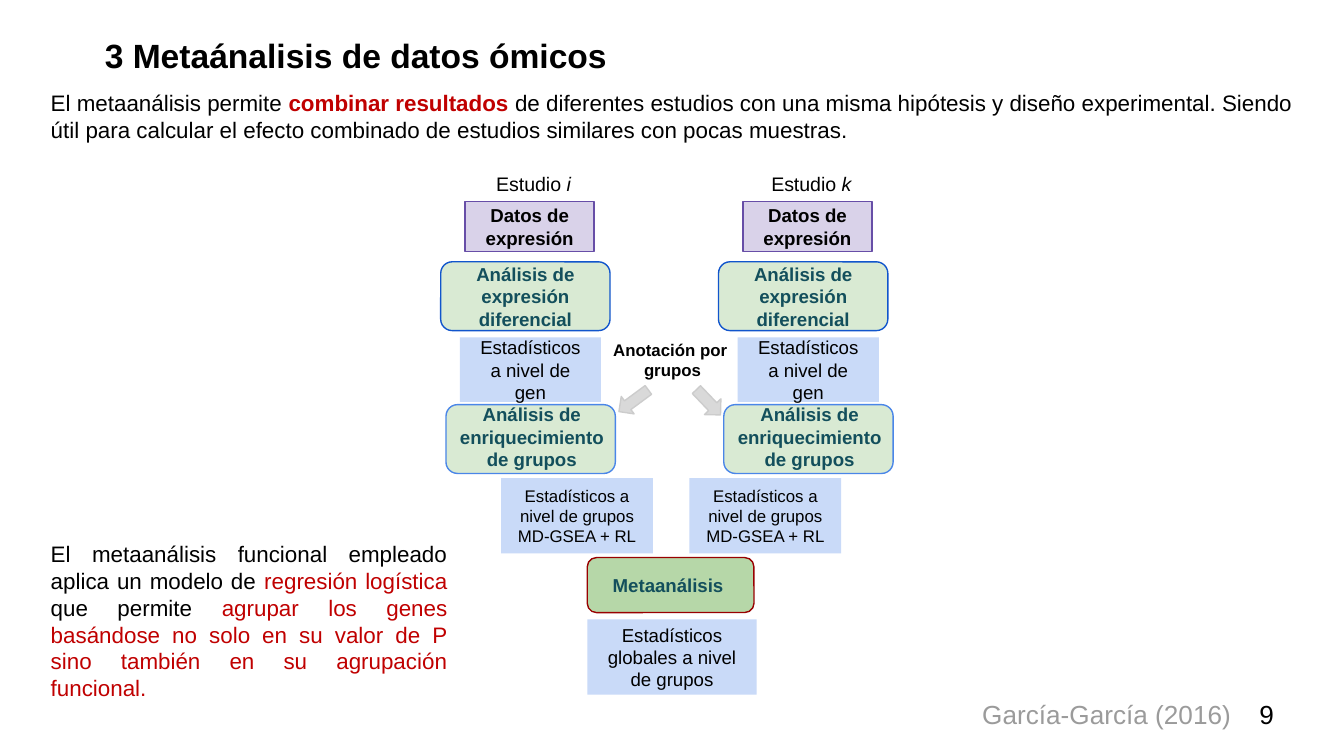
from dataclasses import dataclass
from typing import NamedTuple, Optional

from pptx import Presentation
from pptx.dml.color import RGBColor
from pptx.enum.shapes import MSO_SHAPE
from pptx.enum.text import MSO_ANCHOR, PP_ALIGN
from pptx.util import Cm, Pt

RECTANGLE = MSO_SHAPE.RECTANGLE
ROUNDED = MSO_SHAPE.ROUNDED_RECTANGLE
ARROW = MSO_SHAPE.RIGHT_ARROW
TOP, MIDDLE = MSO_ANCHOR.TOP, MSO_ANCHOR.MIDDLE
LEFT, CENTER = PP_ALIGN.LEFT, PP_ALIGN.CENTER
RIGHT, JUSTIFY = PP_ALIGN.RIGHT, PP_ALIGN.JUSTIFY


@dataclass(frozen=True)
class Theme:
    font: str = "Arial"
    ink: str = "000000"
    accent: str = "C00000"
    teal: str = "134F5C"
    citation: str = "9B9B9B"
    lilac: str = "D9D2E9"
    purple: str = "674EA7"
    pale_green: str = "D9EAD3"
    green: str = "B6D7A8"
    pale_blue: str = "C9DAF8"
    dark_blue: str = "1155CC"
    blue: str = "4A86E8"
    dark_red: str = "980000"
    arrow_fill: str = "D9D9D9"
    arrow_line: str = "CCCCCC"
    title: float = 18
    large: float = 14
    body: float = 12
    label: float = 10.5
    step: float = 10
    small: float = 9
    outline: float = 0.75


THEME = Theme()


class Area(NamedTuple):
    left: float
    top: float
    width: float
    height: float

    def shifted(self, distance: float) -> "Area":
        return self._replace(left=self.left + distance)

    def lengths(self) -> list:
        return [Cm(value) for value in self]


class Span(NamedTuple):
    text: str
    size: float
    color: str = THEME.ink
    bold: bool = False
    italic: bool = False


Paragraphs = list[list[Span]]


@dataclass(frozen=True)
class Step:
    area: Area
    paragraphs: Paragraphs
    fill: str
    line: Optional[str] = None
    preset: MSO_SHAPE = RECTANGLE


def write(box, paragraphs: Paragraphs, align=CENTER, anchor=TOP,
          inset: float = 0.25, after: float = 0, wrap: bool = True) -> None:
    frame = box.text_frame
    frame_format = {
        "word_wrap": wrap, "vertical_anchor": anchor,
        "margin_left": Cm(0.25), "margin_right": Cm(0.25),
        "margin_top": Cm(inset), "margin_bottom": Cm(inset),
    }
    for name, value in frame_format.items():
        setattr(frame, name, value)
    for index, spans in enumerate(paragraphs):
        para = frame.add_paragraph() if index else frame.paragraphs[0]
        para.alignment = align
        para.space_after = Pt(after)
        for span in spans:
            run = para.add_run()
            run.text = span.text
            run_format = {"name": THEME.font, "size": Pt(span.size),
                          "bold": span.bold, "italic": span.italic}
            for name, value in run_format.items():
                setattr(run.font, name, value)
            run.font.color.rgb = RGBColor.from_string(span.color)


def add_text(shapes, area: Area, paragraphs: Paragraphs, **text_format) -> None:
    write(shapes.add_textbox(*area.lengths()), paragraphs, **text_format)


def add_figure(shapes, preset: MSO_SHAPE, area: Area, fill: str, line: Optional[str]):
    figure = shapes.add_shape(preset, *area.lengths())
    figure.shadow.inherit = False
    figure.fill.solid()
    figure.fill.fore_color.rgb = RGBColor.from_string(fill)
    if line:
        figure.line.color.rgb = RGBColor.from_string(line)
        figure.line.width = Pt(THEME.outline)
    else:
        figure.line.fill.background()
    return figure


def add_step(shapes, step: Step, shift: float = 0) -> None:
    figure = add_figure(shapes, step.preset, step.area.shifted(shift), step.fill, step.line)
    write(figure, step.paragraphs, anchor=MIDDLE)


def add_study(shapes, letter: str, shift: float) -> None:
    for step in STUDY_STEPS:
        add_step(shapes, step, shift)
    add_text(shapes, Area(8.69, 2.95, 2.79, 1.04).shifted(shift),
             [[Span("Estudio ", THEME.label), Span(letter, THEME.label, italic=True)]],
             anchor=MIDDLE)
    enrichment = shapes.add_group_shape().shapes
    add_figure(enrichment, ROUNDED, Area(8.43, 7.65, 3.2, 1.3).shifted(shift),
               THEME.pale_green, THEME.blue)
    add_text(enrichment, Area(8.31, 7.37, 3.48, 1.57).shifted(shift),
             [[Span("Análisis de enriquecimiento de grupos", THEME.step, THEME.teal, True)]])


STUDY_STEPS = [
    Step(Area(8.33, 4.95, 3.2, 1.3),
         [[Span("Análisis de expresión diferencial", THEME.step, THEME.teal, True)]],
         THEME.pale_green, THEME.dark_blue, ROUNDED),
    Step(Area(8.69, 6.38, 2.67, 1.22),
         [[Span("Estadísticos a nivel de gen", THEME.step)]], THEME.pale_blue),
    Step(Area(8.79, 3.81, 2.44, 0.94),
         [[Span("Datos de expresión", THEME.step, bold=True)]],
         THEME.lilac, THEME.purple),
]
GROUP_STATISTICS = Step(
    Area(9.47, 9.04, 2.87, 1.42),
    [[Span("Estadísticos a nivel de grupos", THEME.small)],
     [Span("MD-GSEA + RL", THEME.small)]],
    THEME.pale_blue)
FINAL_STEPS = [
    Step(Area(11.1, 10.54, 3.15, 1.04),
         [[Span("Metaanálisis ", THEME.step, THEME.teal, True)]],
         THEME.green, THEME.dark_red, ROUNDED),
    Step(Area(11.1, 11.71, 3.2, 1.42),
         [[Span("Estadísticos globales a nivel de grupos", THEME.step)]],
         THEME.pale_blue),
]
ARROWS = [(Area(11.63, 7.37, 0.69, 0.41), 143.6), (Area(13.06, 7.39, 0.66, 0.43), 46.3)]
INTRODUCTION = [[
    Span("El metaanálisis permite ", THEME.body),
    Span("combinar resultados ", THEME.body, THEME.accent, True),
    Span("de diferentes estudios con una misma hipótesis y diseño experimental. "
         "Siendo útil para calcular el efecto combinado de estudios similares "
         "con pocas muestras.", THEME.body),
]]
MODEL = [[
    Span("El metaanálisis funcional empleado aplica un modelo de ", THEME.body),
    Span("regresión logística ", THEME.body, THEME.accent),
    Span("que permite ", THEME.body),
    Span("agrupar los genes basándose no solo en su valor de P sino también "
         "en su agrupación funcional.", THEME.body, THEME.accent),
]]


def main() -> None:
    deck = Presentation()
    deck.slide_width, deck.slide_height = Cm(25.4), Cm(14.29)
    page = deck.slides.add_slide(deck.slide_layouts[5])
    shapes = page.shapes

    title = shapes.title
    title.left, title.top, title.width, title.height = Area(0.71, 0.53, 12.7, 1.02).lengths()
    write(title, [[Span("3 Metaánalisis de datos ómicos", THEME.title, bold=True)]],
          align=JUSTIFY, inset=0.13)
    title_para = title.text_frame.paragraphs[0]
    title_para.space_before = Pt(10)
    title_para._p.get_or_add_pPr().set("marL", str(Cm(1.02)))

    add_text(shapes, Area(0.71, 1.55, 24, 1.27), INTRODUCTION,
             align=LEFT, inset=0.13, after=6)
    add_text(shapes, Area(0.71, 10.08, 8, 3.33), MODEL,
             align=JUSTIFY, inset=0.13, after=6)
    add_text(shapes, Area(11.25, 6.17, 2.92, 1.68),
             [[Span("Anotación por ", THEME.small, bold=True)],
              [Span("grupos", THEME.small, bold=True)]])

    for area, angle in ARROWS:
        arrow = add_figure(shapes, ARROW, area, THEME.arrow_fill, THEME.arrow_line)
        arrow.rotation = angle
    for column, letter in enumerate("ik"):
        add_study(shapes, letter, column * 5.25)
        add_step(shapes, GROUP_STATISTICS, column * 3.56)
    for step in FINAL_STEPS:
        add_step(shapes, step)

    add_text(shapes, Area(18.29, 13.08, 5.23, 0.86),
             [[Span("García-García (2016)", THEME.large, THEME.citation)]],
             align=RIGHT, inset=0.13, wrap=False)
    add_text(shapes, Area(23.55, 12.95, 1.52, 1.09), [[Span("9", THEME.large)]],
             align=LEFT, anchor=MIDDLE)
    deck.save("out.pptx")


if __name__ == "__main__":
    main()
